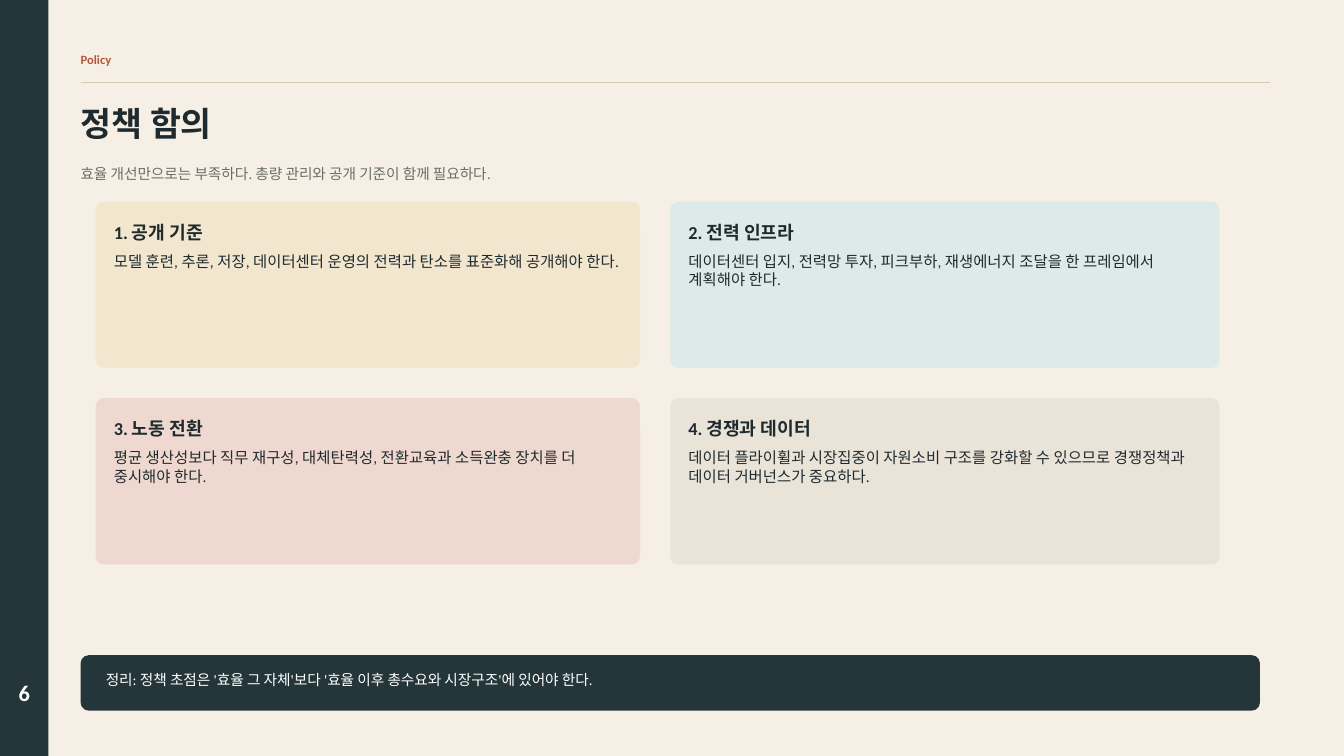
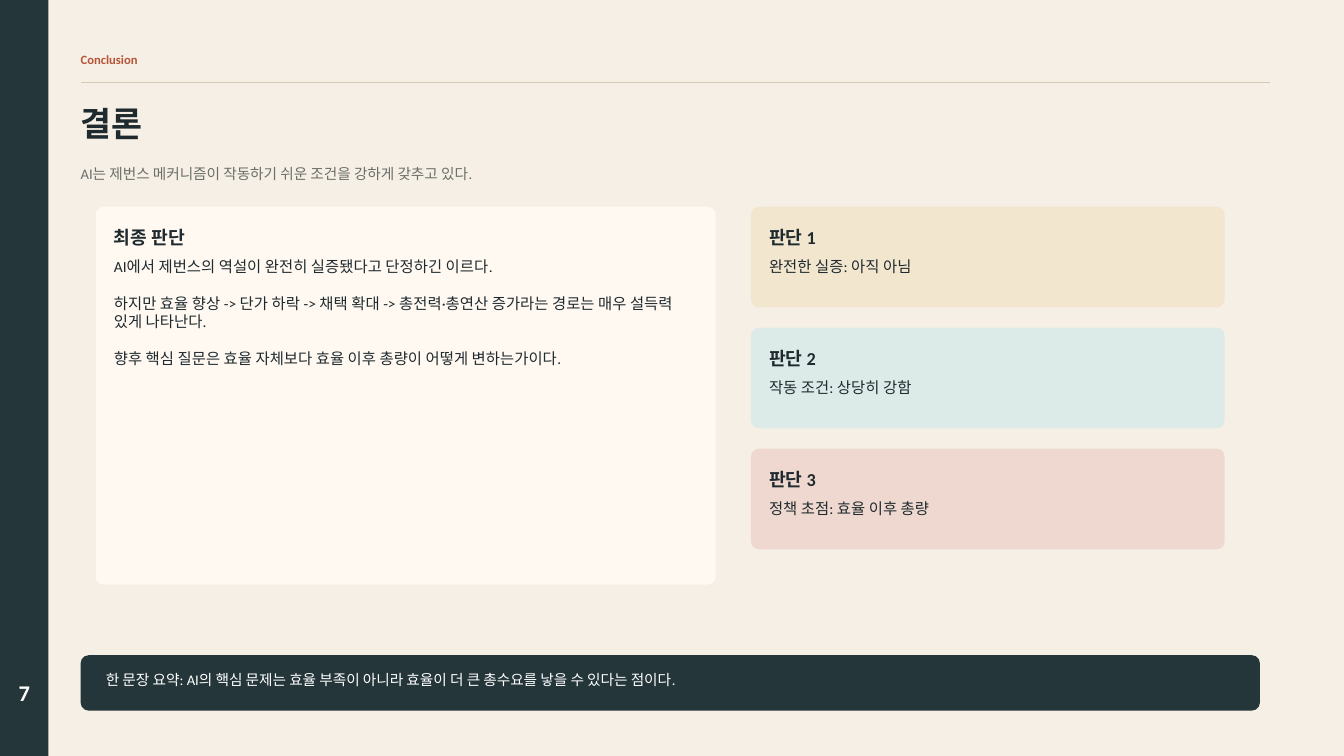
from pptx import Presentation
from pptx.dml.color import RGBColor
from pptx.enum.shapes import MSO_CONNECTOR, MSO_SHAPE
from pptx.enum.text import MSO_ANCHOR, PP_ALIGN
from pptx.oxml.ns import qn
from pptx.util import Pt
from lxml import etree

RECTANGLE = MSO_SHAPE.RECTANGLE
ROUNDED = MSO_SHAPE.ROUNDED_RECTANGLE
STRAIGHT = MSO_CONNECTOR.STRAIGHT
TOP, MIDDLE = MSO_ANCHOR.TOP, MSO_ANCHOR.MIDDLE
LEFT, CENTER = PP_ALIGN.LEFT, PP_ALIGN.CENTER

PAPER = RGBColor(0xF5, 0xEF, 0xE5)
DARK = RGBColor(0x24, 0x36, 0x3A)
INK = RGBColor(0x1F, 0x2A, 0x2E)
GRAY = RGBColor(0x6B, 0x6E, 0x69)
RUST = RGBColor(0xB7, 0x54, 0x37)
RULE = RGBColor(0xD8, 0xC9, 0xB5)
WHITE = RGBColor(0xFF, 0xFF, 0xFF)
CREAM = RGBColor(0xFF, 0xF9, 0xF2)
SAND = RGBColor(0xF2, 0xE6, 0xCF)
MINT = RGBColor(0xDC, 0xEB, 0xE8)
ROSE = RGBColor(0xEF, 0xD8, 0xCF)
STONE = RGBColor(0xE9, 0xE3, 0xD8)

FONT = "Calibri"
MARGIN = 57.6
CORNER = 5.76
CARD_INSET = 12.96
PARAGRAPH_GAP = 13


def add_panel(slide, kind, left, top, width, height, color):
    shape = slide.shapes.add_shape(kind, Pt(left), Pt(top), Pt(width), Pt(height))
    shape.shadow.inherit = False
    shape.fill.solid()
    shape.fill.fore_color.rgb = color
    shape.line.fill.background()
    if kind == ROUNDED:
        shape.adjustments[0] = CORNER / min(width, height)


def add_text(slide, left, top, width, height, lines, size, color,
             bold=False, anchor=MIDDLE, align=LEFT):
    box = slide.shapes.add_textbox(Pt(left), Pt(top), Pt(width), Pt(height))
    frame = box.text_frame
    frame.word_wrap = True
    frame.vertical_anchor = anchor
    frame.margin_left = frame.margin_right = Pt(0)
    frame.margin_top = frame.margin_bottom = Pt(0)
    for index, line in enumerate(lines):
        paragraph = frame.paragraphs[0]
        if index:
            paragraph = frame.add_paragraph()
            paragraph.space_before = Pt(PARAGRAPH_GAP)
        paragraph.alignment = align
        run = paragraph.add_run()
        run.text = line
        run.font.name = FONT
        run.font.size = Pt(size)
        run.font.bold = bold
        run.font.color.rgb = color


# Policy cards: a grid of two columns and two rows
policy_columns = [(68.4, 388.8), (478.8, 392.4)]
policy_texts = [
    ("1. 공개 기준", SAND,
     "모델 훈련, 추론, 저장, 데이터센터 운영의 전력과 탄소를 표준화해 공개해야 한다."),
    ("2. 전력 인프라", MINT,
     "데이터센터 입지, 전력망 투자, 피크부하, 재생에너지 조달을 한 프레임에서 계획해야 한다."),
    ("3. 노동 전환", ROSE,
     "평균 생산성보다 직무 재구성, 대체탄력성, 전환교육과 소득완충 장치를 더 중시해야 한다."),
    ("4. 경쟁과 데이터", STONE,
     "데이터 플라이휠과 시장집중이 자원소비 구조를 강화할 수 있으므로 "
     "경쟁정책과 데이터 거버넌스가 중요하다."),
]
policy_cards = []
for index, (heading, color, body) in enumerate(policy_texts):
    row, column = divmod(index, 2)
    left, width = policy_columns[column]
    policy_cards.append((left, 144 + row * 140.4, width, 118.8, color, heading, [body]))

# Conclusion cards: one large card and a stack of three
conclusion_cards = [(68.4, 147.6, 442.8, 270, CREAM, "최종 판단", [
    "AI에서 제번스의 역설이 완전히 실증됐다고 단정하긴 이르다.",
    "하지만 효율 향상 -> 단가 하락 -> 채택 확대 -> 총전력·총연산 증가라는 경로는 "
    "매우 설득력 있게 나타난다.",
    "향후 핵심 질문은 효율 자체보다 효율 이후 총량이 어떻게 변하는가이다.",
])]
judgements = [
    (SAND, "완전한 실증: 아직 아님"),
    (MINT, "작동 조건: 상당히 강함"),
    (ROSE, "정책 초점: 효율 이후 총량"),
]
for index, (color, body) in enumerate(judgements):
    conclusion_cards.append((536.4, 147.6 + index * 86.4, 338.4, 72, color,
                             f"판단 {index + 1}", [body]))

pages = [
    ("6", "Policy", "정책 함의",
     "효율 개선만으로는 부족하다. 총량 관리와 공개 기준이 함께 필요하다.",
     policy_cards,
     "정리: 정책 초점은 '효율 그 자체'보다 '효율 이후 총수요와 시장구조'에 있어야 한다."),
    ("7", "Conclusion", "결론",
     "AI는 제번스 메커니즘이 작동하기 쉬운 조건을 강하게 갖추고 있다.",
     conclusion_cards,
     "한 문장 요약: AI의 핵심 문제는 효율 부족이 아니라 효율이 더 큰 총수요를 낳을 수 있다는 점이다."),
]

presentation = Presentation()
presentation.slide_width = Pt(960)
presentation.slide_height = Pt(540)
background = presentation.slide_master.background.fill
background.solid()
background.fore_color.rgb = PAPER
blank_layout = presentation.slide_layouts[6]

for number, section, title, subtitle, cards, summary in pages:
    slide = presentation.slides.add_slide(blank_layout)

    # Side band with page number
    add_panel(slide, RECTANGLE, 0, 0, 34.56, 540, DARK)
    add_text(slide, 5.76, 482.4, 23.04, 25.2, [number], 16, WHITE, bold=True, align=CENTER)

    # Header
    add_text(slide, MARGIN, 32.4, 302.4, 20.16, [section], 9, RUST, bold=True)
    rule = slide.shapes.add_connector(STRAIGHT, Pt(MARGIN), Pt(59.04), Pt(907.2), Pt(59.04))
    rule.line.color.rgb = RULE
    rule.line.width = Pt(1.2)
    etree.SubElement(rule.element.spPr, qn("a:effectLst"))
    add_text(slide, MARGIN, 68.4, 568.8, 39.6, [title], 24, INK, bold=True)
    add_text(slide, MARGIN, 111.6, 633.6, 25.2, [subtitle], 10.5, GRAY)

    # Cards
    for left, top, width, height, color, heading, body in cards:
        add_panel(slide, ROUNDED, left, top, width, height, color)
        text_left, text_width = left + CARD_INSET, width - 2 * CARD_INSET
        add_text(slide, text_left, top + 11.52, text_width, 20.16, [heading], 13, INK, bold=True)
        add_text(slide, text_left, top + 36, text_width, height - 46.08, body, 11, INK, anchor=TOP)

    # Summary bar
    add_panel(slide, ROUNDED, MARGIN, 468, 842.4, 39.6, DARK)
    add_text(slide, MARGIN + 18, 478.08, 806.4, 14.4, [summary], 10.5, WHITE)

presentation.save("out.pptx")
